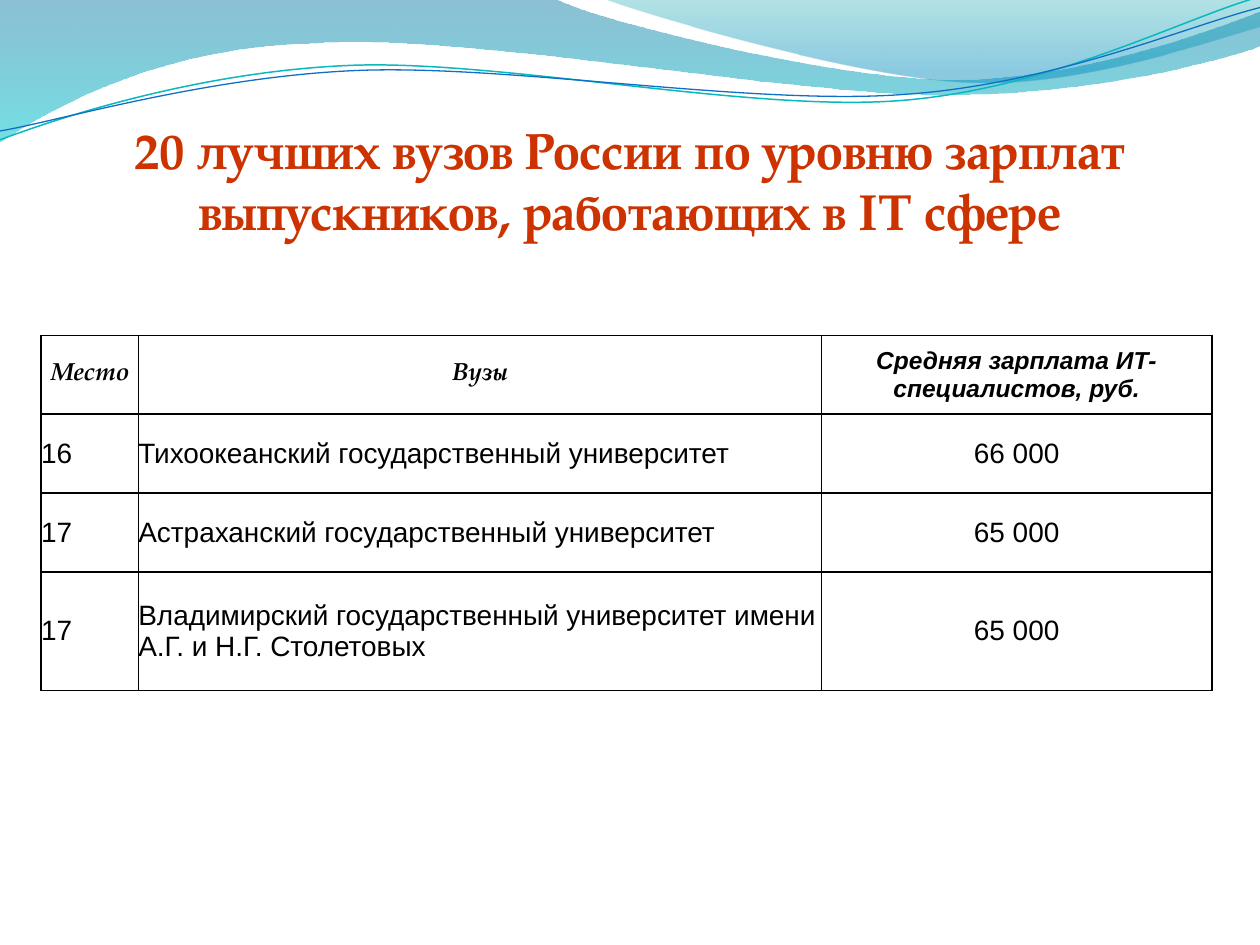
"""Build a slide with a wave banner, a title and a table of university salaries."""
from lxml.etree import Element, SubElement
from pptx import Presentation
from pptx.dml.color import RGBColor as RGB
from pptx.enum.text import MSO_ANCHOR as Anchor, MSO_AUTO_SIZE as Fit, PP_ALIGN as Align
from pptx.oxml.ns import qn
from pptx.util import Cm, Pt

INCH = Cm(2.54)
BLACK = RGB(0, 0, 0)
RED = RGB(0xCC, 0x33, 0x00)
TEAL = RGB(0x0A, 0xB8, 0xBF)
BLUE = RGB(0x0F, 0x6F, 0xC6)
SEA = RGB(0x00, 0x74, 0xA1)
AQUA = RGB(0x00, 0xC6, 0xCF)
CYAN = RGB(0x00, 0xA1, 0xA9)
SKY = RGB(0x00, 0x8B, 0xBF)
SERIF = "TeX Gyre Pagella"
SANS = "Arial"


def trace(start, parts, closed):
    """Draw lines (two numbers) and cubic curves (six numbers), in inches."""
    dots = [(part[i] * INCH, part[i + 1] * INCH)
            for part in parts for i in range(0, len(part), 2)]
    pen = slide.shapes.build_freeform(start[0] * INCH, start[1] * INCH)
    pen.add_line_segments(dots, close=closed)
    shape = pen.convert_to_shape()
    shape.shadow.inherit = False
    lines = iter(list(shape.element.spPr.iter(qn("a:lnTo"))))
    for part in parts:
        group = [next(lines) for _ in range(len(part) // 2)]
        if len(group) == 3:
            bend = Element(qn("a:cubicBezTo"))
            group[0].addprevious(bend)
            for line in group:
                bend.append(line[0])
                line.getparent().remove(line)
    return shape


def style(para, face, size, color, bold=False, italic=False):
    """Format the font of a whole paragraph."""
    font = para.font
    font.name, font.size, font.bold, font.italic = face, Pt(size), bold, italic
    font.color.rgb = color


deck = Presentation()
deck.slide_width, deck.slide_height = Cm(25.4), Cm(19.05)
slide = deck.slides.add_slide(deck.slide_layouts[5])

waves = [
    ((0, 0), [(4.4, -0.01), (4.76, 0.17, 6.64, 0.63, 7.58, 0.63),
              (8.53, 0.63, 9.58, 0.26, 10, 0.09), (10.01, 0.36),
              (9.83, 0.44, 8.7, 0.76, 7.46, 0.75), (6.22, 0.75, 3.82, 0.28, 2.57, 0.34),
              (1.29, 0.36, 0.46, 0.83, -0.01, 1.13)],
     [(0, SEA, 45), (1, AQUA, 55)]),
    ((4.79, -0.01), [(5.09, 0.11, 6.82, 0.62, 7.69, 0.65),
                     (8.56, 0.69, 9.61, 0.32, 10, 0.21), (10, 0)],
     [(0, CYAN, 30), (0.8, SKY, 45)]),
]
for start, parts, stops in waves:
    wave = trace(start, parts, True)
    wave.line.fill.background()
    wave.fill.gradient()
    wave.fill.gradient_angle = 270
    for stop, (place, color, _) in zip(wave.fill.gradient_stops, stops):
        stop.position = place
        stop.color.rgb = color
    for node, (_, _, alpha) in zip(wave.element.spPr.iter(qn("a:srgbClr")), stops):
        SubElement(node, qn("a:alpha"), val=str(alpha * 1000))

curves = [
    ((0, 1.11), [(0.48, 0.93, 1.58, 0.57, 2.77, 0.52), (3.95, 0.47, 5.93, 0.89, 7.13, 0.8),
                 (8.33, 0.71, 9.38, 0.15, 9.98, -0.02)], TEAL, 0.85),
    ((0, 1.04), [(0.47, 0.96, 1.64, 0.61, 2.83, 0.56), (4.03, 0.51, 5.97, 0.84, 7.17, 0.75),
                 (8.36, 0.67, 9.41, 0.21, 10, 0.06)], BLUE, 0.75),
]
for start, parts, color, width in curves:
    curve = trace(start, parts, False)
    curve.fill.background()
    curve.line.color.rgb = color
    curve.line.width = Pt(width)

title = slide.shapes.title
title.element.getparent().append(title.element)
title.left, title.top, title.width, title.height = Cm(1.36), Cm(2.25), Cm(22.68), Cm(2.74)
frame = title.text_frame
frame.text = "20 лучших вузов России по уровню зарплат выпускников, работающих в IT сфере"
frame.word_wrap, frame.auto_size = True, Fit.NONE
frame.vertical_anchor = Anchor.MIDDLE
frame.paragraphs[0].alignment = Align.CENTER
style(frame.paragraphs[0], SERIF, 29, RED, bold=True)

rows = [
    ("Место", "Вузы", "Средняя зарплата ИТ-специалистов, руб."),
    ("16", "Тихоокеанский государственный университет", "66 000"),
    ("17", "Астраханский государственный университет", "65 000"),
    ("17", "Владимирский государственный университет имени А.Г. и Н.Г. Столетовых", "65 000"),
]
widths = (1.96, 13.77, 7.87)
heights = (1.59, 1.59, 1.59, 2.39)
table = slide.shapes.add_table(len(rows), len(widths), Cm(0.83), Cm(6.76),
                               Cm(sum(widths)), Cm(sum(heights))).table
table.first_row = table.horz_banding = False
for col, width in zip(table.columns, widths):
    col.width = Cm(width)
for r, (row, height) in enumerate(zip(rows, heights)):
    table.rows[r].height = Cm(height)
    for c, text in enumerate(row):
        cell = table.cell(r, c)
        cell.text = text
        cell.margin_left = cell.margin_right = cell.margin_top = cell.margin_bottom = 0
        cell.vertical_anchor = Anchor.MIDDLE
        props = cell._tc.get_or_add_tcPr()
        for side in "LRTB":
            edge = SubElement(props, qn("a:ln" + side), w=str(Pt(1)))
            SubElement(SubElement(edge, qn("a:solidFill")), qn("a:srgbClr"), val=str(BLACK))
        cell.fill.background()
        para = cell.text_frame.paragraphs[0]
        head = r == 0
        para.alignment = Align.CENTER if head or c == 2 else Align.LEFT
        face = SERIF if head and c < 2 else SANS
        style(para, face, 14 if head else 16, BLACK, bold=head, italic=head)

deck.save("out.pptx")
